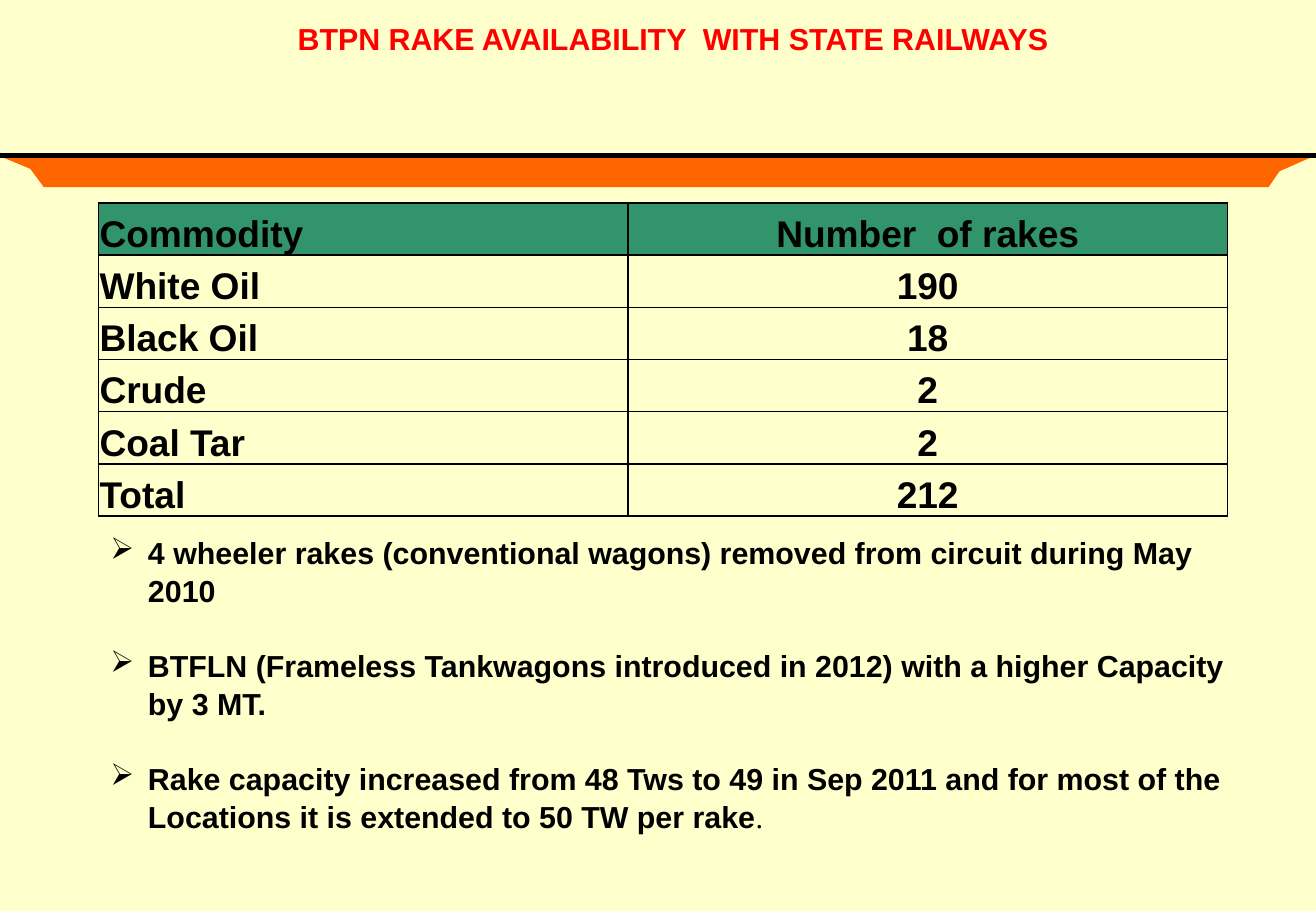
from lxml.etree import SubElement
from pptx import Presentation
from pptx.dml.color import RGBColor
from pptx.enum.text import MSO_ANCHOR, PP_ALIGN
from pptx.oxml.ns import qn
from pptx.util import Inches, Pt

COLORS = {
    "background": "FFFFCC",
    "band": "FF6600",
    "title": "FF0000",
    "header": "32946A",
    "ink": "000000",
}
SLIDE_WIDTH = 10.83

RAKES = [
    ("Commodity", "Number  of rakes"),
    ("White Oil", "190"),
    ("Black Oil", "18"),
    ("Crude", "2"),
    ("Coal Tar", "2"),
    ("Total", "212"),
]
NOTES = [
    "4 wheeler rakes (conventional wagons) removed from circuit during May 2010",
    "BTFLN (Frameless Tankwagons introduced in 2012) with a higher Capacity by 3 MT.",
    "Rake capacity increased from 48 Tws to 49 in Sep 2011 and for most of the "
    "Locations it is extended to 50 TW per rake",
]


def rgb(name):
    return RGBColor.from_string(COLORS[name])


def write(paragraph, text, size=18, color="ink", bold=True, font="Arial",
          align=PP_ALIGN.LEFT, spacing=None):
    run = paragraph.add_run()
    run.text = text
    run.font.name = font
    run.font.size = Pt(size)
    run.font.bold = bold
    run.font.color.rgb = rgb(color)
    paragraph.alignment = align
    if spacing:
        paragraph.line_spacing = spacing


def indent(paragraph, left, first, bullet=None):
    properties = paragraph._p.get_or_add_pPr()
    properties.set("marL", str(Inches(left)))
    properties.set("indent", str(Inches(first)))
    if bullet:
        SubElement(properties, qn("a:buChar")).set("char", bullet)


def add_text_frame(slide, left, top, width, height):
    frame = slide.shapes.add_textbox(
        Inches(left), Inches(top), Inches(width), Inches(height)).text_frame
    frame.word_wrap = True
    return frame


def add_band(slide):
    outline = [(0.01, 1.29), (10.8, 1.29), (10.53, 1.41),
               (10.44, 1.54), (0.36, 1.54), (0.25, 1.39)]
    points = [(Inches(x), Inches(y)) for x, y in outline]
    builder = slide.shapes.build_freeform(*points[0])
    builder.add_line_segments(points[1:], close=True)
    band = builder.convert_to_shape()
    band.shadow.inherit = False
    band.fill.solid()
    band.fill.fore_color.rgb = rgb("band")
    band.line.fill.background()


def add_rule(slide, top):
    rule = slide.shapes.add_connector(
        1, 0, Inches(top), Inches(SLIDE_WIDTH), Inches(top))
    rule.line.color.rgb = rgb("ink")
    rule.line.width = Pt(3)
    SubElement(rule._element.spPr, qn("a:effectLst"))


def add_borders(cell):
    properties = cell._tc.get_or_add_tcPr()
    for position, side in enumerate(("lnL", "lnR", "lnT", "lnB")):
        border = SubElement(properties, qn("a:" + side))
        border.set("w", str(Pt(1)))
        fill = SubElement(border, qn("a:solidFill"))
        SubElement(fill, qn("a:srgbClr")).set("val", COLORS["ink"])
        properties.insert(position, border)


def add_rake_table(slide):
    widths, row_height = (4.36, 4.93), 0.43
    table = slide.shapes.add_table(
        len(RAKES), len(widths), Inches(0.81), Inches(1.67),
        Inches(sum(widths)), Inches(row_height * len(RAKES))).table
    table.first_row = table.horz_banding = False
    for column, width in zip(table.columns, widths):
        column.width = Inches(width)
    for row, values in enumerate(RAKES):
        table.rows[row].height = Inches(row_height)
        for column, value in enumerate(values):
            cell = table.cell(row, column)
            cell.margin_left = cell.margin_right = cell.margin_top = Inches(0.01)
            cell.margin_bottom = 0
            cell.vertical_anchor = MSO_ANCHOR.BOTTOM
            if row == 0:
                cell.fill.solid()
                cell.fill.fore_color.rgb = rgb("header")
            else:
                cell.fill.background()
            add_borders(cell)
            write(cell.text_frame.paragraphs[0], value, size=22,
                  align=PP_ALIGN.CENTER if column else PP_ALIGN.LEFT)


def add_title(slide):
    title = add_text_frame(slide, 0, 0, SLIDE_WIDTH, 0.83).paragraphs[0]
    indent(title, 0.69, -0.44)
    write(title, "BTPN RAKE AVAILABILITY  WITH STATE RAILWAYS", color="title",
          align=PP_ALIGN.CENTER, spacing=1.4)


def add_notes_list(slide):
    frame = add_text_frame(slide, 0.81, 4.33, 9.66, 2.52)
    for number, note in enumerate(NOTES):
        paragraph = frame.add_paragraph() if number else frame.paragraphs[0]
        indent(paragraph, 0.31, -0.31, bullet="➢")
        write(paragraph, note, spacing=1.05)
        if number:
            paragraph.space_before = Pt(21.7)
    # The closing full stop is set in a lighter face
    write(paragraph, ".", bold=False, font="Times New Roman", spacing=1.05)


def main():
    presentation = Presentation()
    presentation.slide_width = Inches(SLIDE_WIDTH)
    presentation.slide_height = Inches(7.5)
    slide = presentation.slides.add_slide(presentation.slide_layouts[6])
    slide.background.fill.solid()
    slide.background.fill.fore_color.rgb = rgb("background")

    # Header
    add_band(slide)
    add_rule(slide, 1.28)
    add_title(slide)

    # Content
    add_rake_table(slide)
    add_notes_list(slide)
    presentation.save("out.pptx")


if __name__ == "__main__":
    main()
